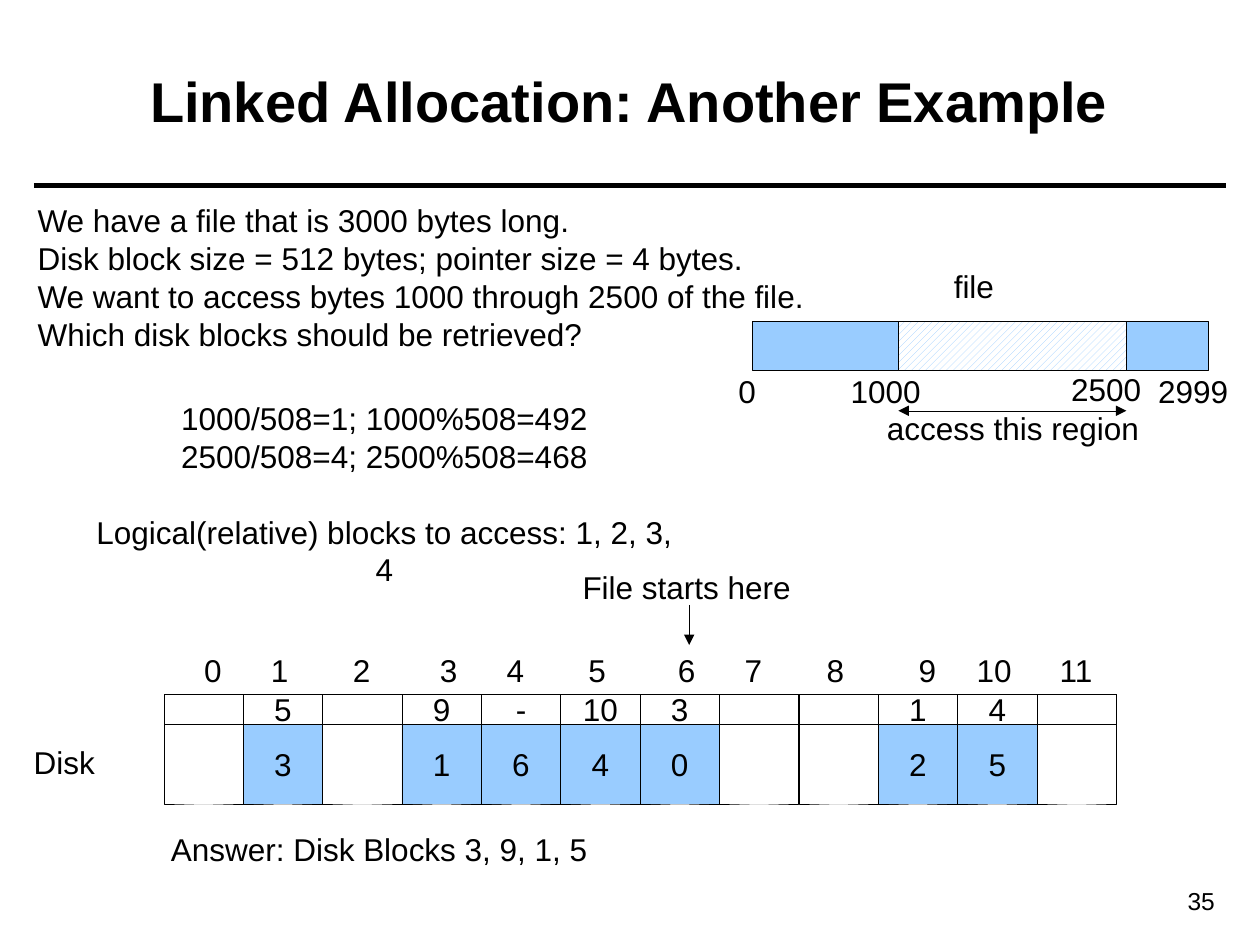
from lxml import etree
from pptx import Presentation
from pptx.dml.color import RGBColor
from pptx.enum.dml import MSO_PATTERN as Pattern
from pptx.enum.shapes import MSO_CONNECTOR as Link, MSO_SHAPE as Kind
from pptx.enum.text import MSO_ANCHOR as Anchor, MSO_AUTO_SIZE as Fit, PP_ALIGN as Align
from pptx.oxml.ns import qn
from pptx.util import Inches, Pt

BLACK, WHITE, BLUE = "000000", "FFFFFF", "99CCFF"
LEFT, TOP, CELL, HEAD = 1.3, 5.51, 0.63, 0.24

# Disk block number: (pointer to next block, logical block held)
BLOCKS = {1: ("5", "3"), 3: ("9", "1"), 4: ("-", "6"), 5: ("10", "4"),
          6: ("3", "0"), 9: ("1", "2"), 10: ("4", "5")}


def color(code):
    return RGBColor.from_string(code)


def style(par, size=18, align=Align.CENTER, bold=False):
    par.alignment = align
    font = par.font
    font.name, font.size, font.bold = "Arial", Pt(size), bold
    font.color.rgb = color(BLACK)


def label(slide, x, y, w, h, lines, align=Align.CENTER, size=18, wrap=False):
    """Add a text box with one paragraph per line."""
    box = slide.shapes.add_textbox(Inches(x), Inches(y), Inches(w), Inches(h))
    frame = box.text_frame
    frame.word_wrap = wrap
    frame.auto_size = Fit.SHAPE_TO_FIT_TEXT
    frame.text = "\n".join(lines)
    for par in frame.paragraphs:
        style(par, size, align)
    return frame


def tag(slide, mid, y, w, text):
    """Add a one-line label centred on mid."""
    label(slide, mid - w / 2, y, w, 0.4, [text])


def block(slide, x, y, w, h, text="", fill=None):
    """Add a thinly outlined rectangle, with optional fill and text."""
    rect = slide.shapes.add_shape(Kind.RECTANGLE, Inches(x), Inches(y), Inches(w), Inches(h))
    rect.shadow.inherit = False
    rect.line.color.rgb = color(BLACK)
    rect.line.width = Pt(0.25)
    if fill:
        rect.fill.solid()
        rect.fill.fore_color.rgb = color(fill)
    else:
        rect.fill.background()
    if text:
        frame = rect.text_frame
        frame.word_wrap = False
        frame.vertical_anchor = Anchor.MIDDLE
        frame.text = text
        style(frame.paragraphs[0])
    return rect


def rule(slide, x1, y1, x2, y2, width=0.25, ends=()):
    """Add a straight line; ends names the line ends that get arrowheads."""
    line = slide.shapes.add_connector(Link.STRAIGHT, Inches(x1), Inches(y1), Inches(x2), Inches(y2))
    line.line.color.rgb = color(BLACK)
    line.line.width = Pt(width)
    props = line._element.spPr.find(qn("a:ln"))
    for end in ends:
        etree.SubElement(props, qn(f"a:{end}"), type="triangle")
    etree.SubElement(line._element.spPr, qn("a:effectLst"))


def heading(slide):
    title = slide.shapes.title
    title.left, title.top = Inches(0.35), Inches(0.17)
    title.width, title.height = Inches(9.29), Inches(1.25)
    title.text_frame.text = "Linked Allocation: Another Example"
    title.text_frame.vertical_anchor = Anchor.MIDDLE
    style(title.text_frame.paragraphs[0], 32, bold=True)
    rule(slide, 0.27, 1.47, 9.73, 1.47, width=3)


def disk(slide):
    spots = [LEFT + i * CELL for i in range(12)]
    # Whole blocks, then pointer fields, then used data fields
    for x in spots:
        block(slide, x, TOP, CELL, HEAD + CELL)
    for i, x in enumerate(spots):
        block(slide, x, TOP, CELL, HEAD, BLOCKS.get(i, ("", ""))[0])
    for i, (_, data) in BLOCKS.items():
        block(slide, spots[i], TOP + HEAD, CELL, CELL, data, BLUE)
    # Block numbers, in four groups of three
    mids = [start + step for start in (1.69, 3.56, 5.45, 7.36) for step in (0, 0.53, 1.18)]
    for i, mid in enumerate(mids):
        tag(slide, mid, 5.12, 0.36 if i < 10 else 0.5, str(i))
    tag(slide, 0.51, 5.85, 0.74, "Disk")
    tag(slide, 5.45, 4.46, 1.9, "File starts here")
    rule(slide, 5.47, 4.8, 5.47, 5.12, ends=["tailEnd"])


def file_bar(slide):
    block(slide, 5.97, 2.55, 3.62, 0.39, fill=BLUE)
    part = block(slide, 7.13, 2.55, 1.81, 0.39)
    part.fill.patterned()
    part.fill.pattern = Pattern.WIDE_UPWARD_DIAGONAL
    part.fill.fore_color.rgb = color(BLUE)
    part.fill.back_color.rgb = color(WHITE)
    for text, mid, y, w in (("file", 7.73, 2.07, 0.56), ("0", 5.93, 2.9, 0.36),
                            ("1000", 7.03, 2.9, 0.8), ("2500", 8.78, 2.89, 0.8),
                            ("2999", 9.47, 2.9, 0.8), ("access this region", 8.04, 3.2, 2.26)):
        tag(slide, mid, y, w, text)
    rule(slide, 7.13, 3.26, 8.94, 3.26, ends=["headEnd", "tailEnd"])


def notes(slide):
    # Question
    label(slide, 0.2, 1.55, 6.35, 1.3, [
        "We have a file that is 3000 bytes long.",
        "Disk block size = 512 bytes; pointer size = 4 bytes.",
        "We want to access bytes 1000 through 2500 of the file.",
        "Which disk blocks should be retrieved?"], Align.LEFT)
    # Working
    work = label(slide, 0.6, 3.12, 4.9, 1.6, [
        "1000/508=1; 1000%508=492",
        "2500/508=4; 2500%508=468",
        "Logical(relative) blocks to access: 1, 2, 3, 4"], wrap=True)
    work.paragraphs[-1].space_before = Pt(21.6)
    # Answer and page number
    tag(slide, 3.01, 6.54, 3.6, "Answer: Disk Blocks 3, 9, 1, 5")
    label(slide, 8.7, 6.98, 1.04, 0.34, ["35"], Align.RIGHT, 14, wrap=True)


def main():
    deck = Presentation()
    deck.slide_width, deck.slide_height = Inches(10), Inches(7.5)
    slide = deck.slides.add_slide(deck.slide_layouts[5])
    heading(slide)
    disk(slide)
    file_bar(slide)
    notes(slide)
    deck.save("out.pptx")


if __name__ == "__main__":
    main()
